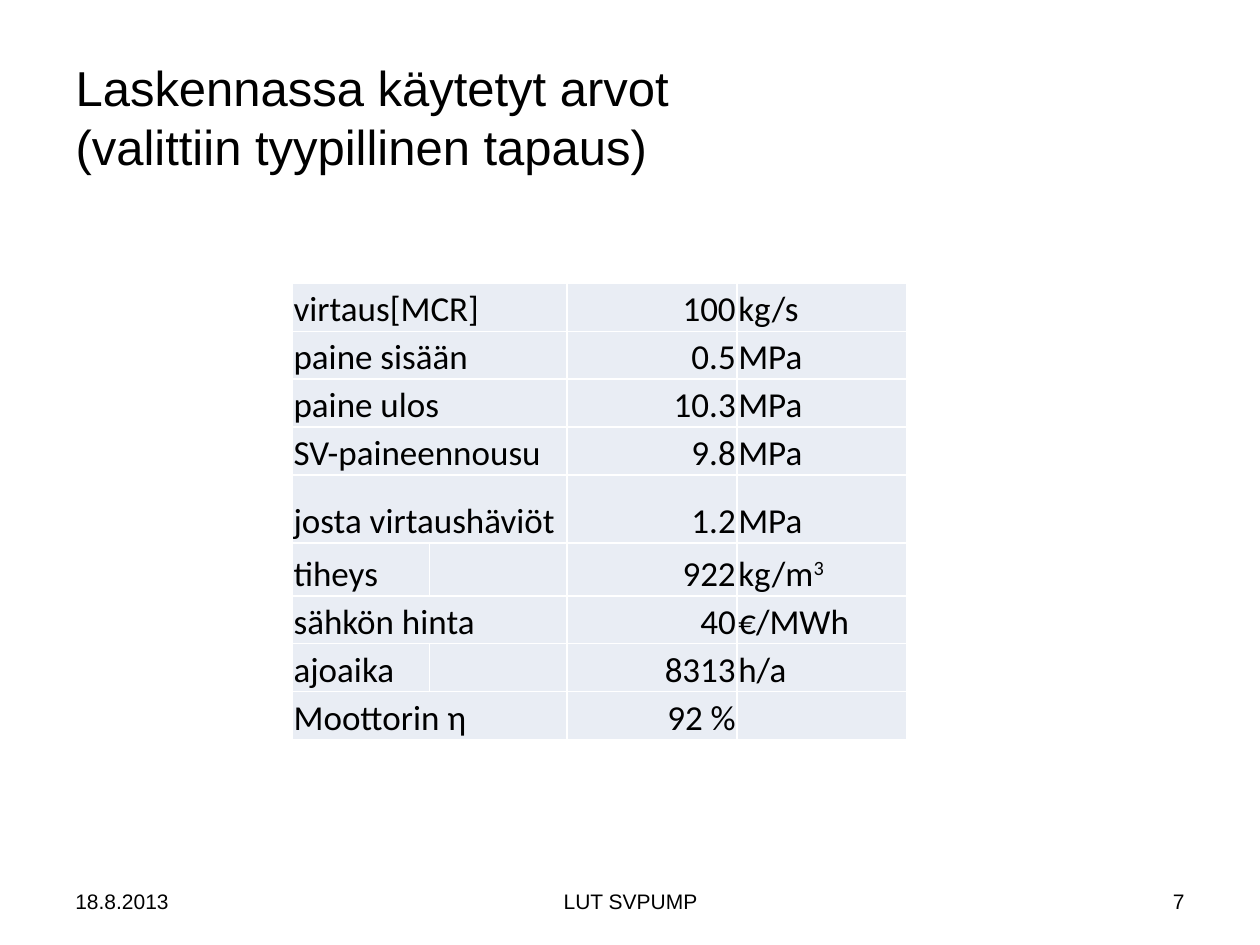
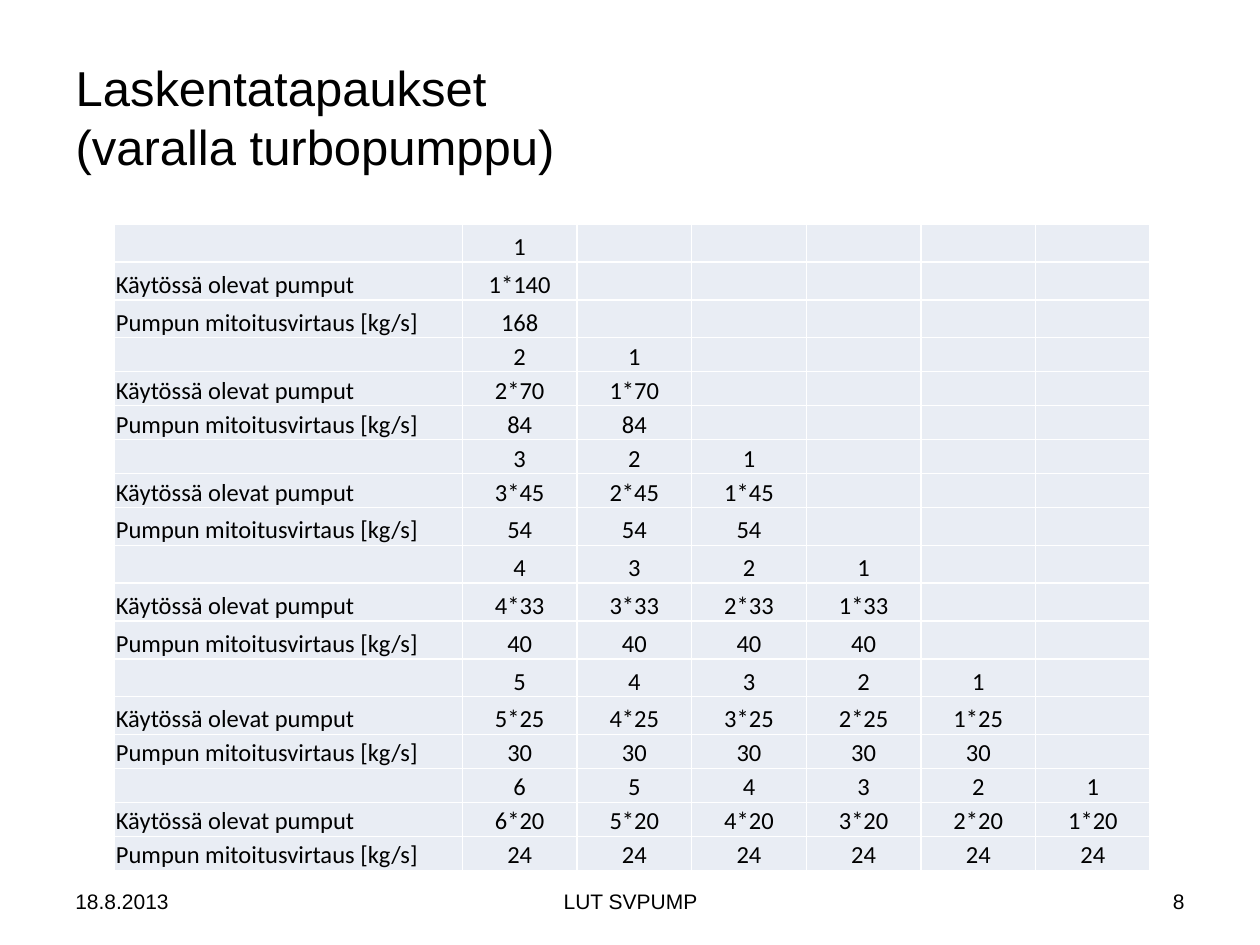
import pptx
import pptx.util
import pptx.dml.color
import pptx.enum.text
import pptx.oxml.ns
from lxml import etree

Inches, Pt = pptx.util.Inches, pptx.util.Pt
ALIGN = pptx.enum.text.PP_ALIGN
ANCHOR = pptx.enum.text.MSO_ANCHOR
qn = pptx.oxml.ns.qn

COLORS = {"text": "000000", "cell": "E9EDF4", "border": "FFFFFF"}
HEADING_FONT, TABLE_FONT = "Arial", "Calibri"
TITLE_ONLY = 5

INPUT_VALUES = [
    ("virtaus[MCR]", "100", "kg/s"),
    ("paine sisään", "0.5", "MPa"),
    ("paine ulos", "10.3", "MPa"),
    ("SV-paineennousu", "9.8", "MPa"),
    ("josta virtaushäviöt", "1.2", "MPa"),
    ("tiheys", "922", "kg/m^3"),
    ("sähkön hinta", "40", "€/MWh"),
    ("ajoaika", "8313", "h/a"),
    ("Moottorin η", "92 %", ""),
]
UNMERGED_LABELS = {"tiheys", "ajoaika"}

# Pumps in the case: (share of the flow per pump, design flow per pump)
PUMP_CASES = {1: (140, 168), 2: (70, 84), 3: (45, 54),
              4: (33, 40), 5: (25, 30), 6: (20, 24)}


def color(name):
    return pptx.dml.color.RGBColor.from_string(COLORS[name])


def add_run(paragraph, text, font, size):
    run = paragraph.add_run()
    run.text = text
    run.font.name = font
    run.font.size = Pt(size)
    run.font.color.rgb = color("text")
    return run


def add_title(slide, *lines):
    title = slide.shapes.title
    title.left, title.top = Inches(0.5), Inches(0.3)
    title.width, title.height = Inches(9), Inches(1.25)
    frame = title.text_frame
    frame.auto_size = pptx.enum.text.MSO_AUTO_SIZE.NONE
    frame.vertical_anchor = ANCHOR.MIDDLE
    paragraph = frame.paragraphs[0]
    paragraph.alignment = ALIGN.LEFT
    for index, line in enumerate(lines):
        if index:
            paragraph.add_line_break()
        add_run(paragraph, line, HEADING_FONT, 28)


def add_footer(slide, number):
    parts = [("18.8.2013", 0.5, 2.33, ALIGN.LEFT),
             ("LUT SVPUMP", 3.42, 3.17, ALIGN.CENTER),
             (str(number), 7.17, 2.33, ALIGN.RIGHT)]
    for text, left, width, alignment in parts:
        box = slide.shapes.add_textbox(Inches(left), Inches(6.95), Inches(width), Inches(0.4))
        frame = box.text_frame
        frame.word_wrap = True
        frame.vertical_anchor = ANCHOR.MIDDLE
        frame.paragraphs[0].alignment = alignment
        add_run(frame.paragraphs[0], text, HEADING_FONT, 12)


def add_slide(deck, number, *title_lines):
    slide = deck.slides.add_slide(deck.slide_layouts[TITLE_ONLY])
    add_title(slide, *title_lines)
    add_footer(slide, number)
    return slide


def add_borders(cell):
    properties = cell._tc.get_or_add_tcPr()
    for side in ("a:lnL", "a:lnR", "a:lnT", "a:lnB"):
        line = etree.SubElement(properties, qn(side), w=str(Pt(1)))
        fill = etree.SubElement(line, qn("a:solidFill"))
        etree.SubElement(fill, qn("a:srgbClr"), val=COLORS["border"])


def fill_cell(cell, text, size, alignment):
    """Format a cell and write its text; what follows ^ is superscript."""
    add_borders(cell)
    cell.fill.solid()
    cell.fill.fore_color.rgb = color("cell")
    cell.margin_left = cell.margin_right = cell.margin_top = Inches(0.01)
    cell.margin_bottom = 0
    cell.vertical_anchor = ANCHOR.BOTTOM
    paragraph = cell.text_frame.paragraphs[0]
    paragraph.alignment = alignment
    base, _, exponent = text.partition("^")
    if base:
        add_run(paragraph, base, TABLE_FONT, size)
    if exponent:
        raised = add_run(paragraph, exponent, TABLE_FONT, size)
        raised._r.get_or_add_rPr().set("baseline", "30000")
    # Keeps empty cells from stretching their row
    etree.SubElement(paragraph._p, qn("a:endParaRPr"), sz=str(size * 100))


def add_table(slide, left, top, widths, heights, rows, size, alignments):
    frame = slide.shapes.add_table(len(rows), len(widths), Inches(left), Inches(top),
                                   Inches(sum(widths)), Inches(sum(heights)))
    table = frame.table
    table.first_row = table.horz_banding = False
    for column, width in zip(table.columns, widths):
        column.width = Inches(width)
    for row, height, texts in zip(table.rows, heights, rows):
        row.height = Inches(height)
        for cell, text, alignment in zip(row.cells, texts, alignments):
            fill_cell(cell, text, size, alignment)
    return table


def add_input_values(slide):
    rows = [(label, "", value, unit) for label, value, unit in INPUT_VALUES]
    heights = [0.38] * 4 + [0.54, 0.42] + [0.38] * 3
    table = add_table(slide, 2.32, 2.25, [1.09, 1.09, 1.35, 1.35], heights, rows, 20,
                      [ALIGN.LEFT, ALIGN.LEFT, ALIGN.RIGHT, ALIGN.LEFT])
    for index, (label, *_) in enumerate(rows):
        if label not in UNMERGED_LABELS:
            table.cell(index, 0).merge(table.cell(index, 1))


def pump_case_rows():
    most_pumps = max(PUMP_CASES)
    rows = []
    for pumps, (share, design_flow) in PUMP_CASES.items():
        running = range(pumps, 0, -1)
        unused = [""] * (most_pumps - pumps)
        rows += [
            ["", *map(str, running), *unused],
            ["Käytössä olevat pumput", *(f"{count}*{share}" for count in running), *unused],
            ["Pumpun mitoitusvirtaus [kg/s]", *[str(design_flow)] * pumps, *unused],
        ]
    return rows


def add_pump_cases(slide):
    heights = [0.3] * 3 + [0.27] * 5 + [0.3] * 6 + [0.27] * 4
    add_table(slide, 0.91, 1.78, [2.76] + [0.91] * 6, heights, pump_case_rows(), 14,
              [ALIGN.LEFT] + [ALIGN.CENTER] * 6)


def main():
    deck = pptx.Presentation()
    deck.slide_width, deck.slide_height = Inches(10), Inches(7.5)
    add_input_values(add_slide(deck, 7, "Laskennassa käytetyt arvot",
                               "(valittiin tyypillinen tapaus)"))
    add_pump_cases(add_slide(deck, 8, "Laskentatapaukset", "(varalla turbopumppu)"))
    deck.save("out.pptx")


if __name__ == "__main__":
    main()
